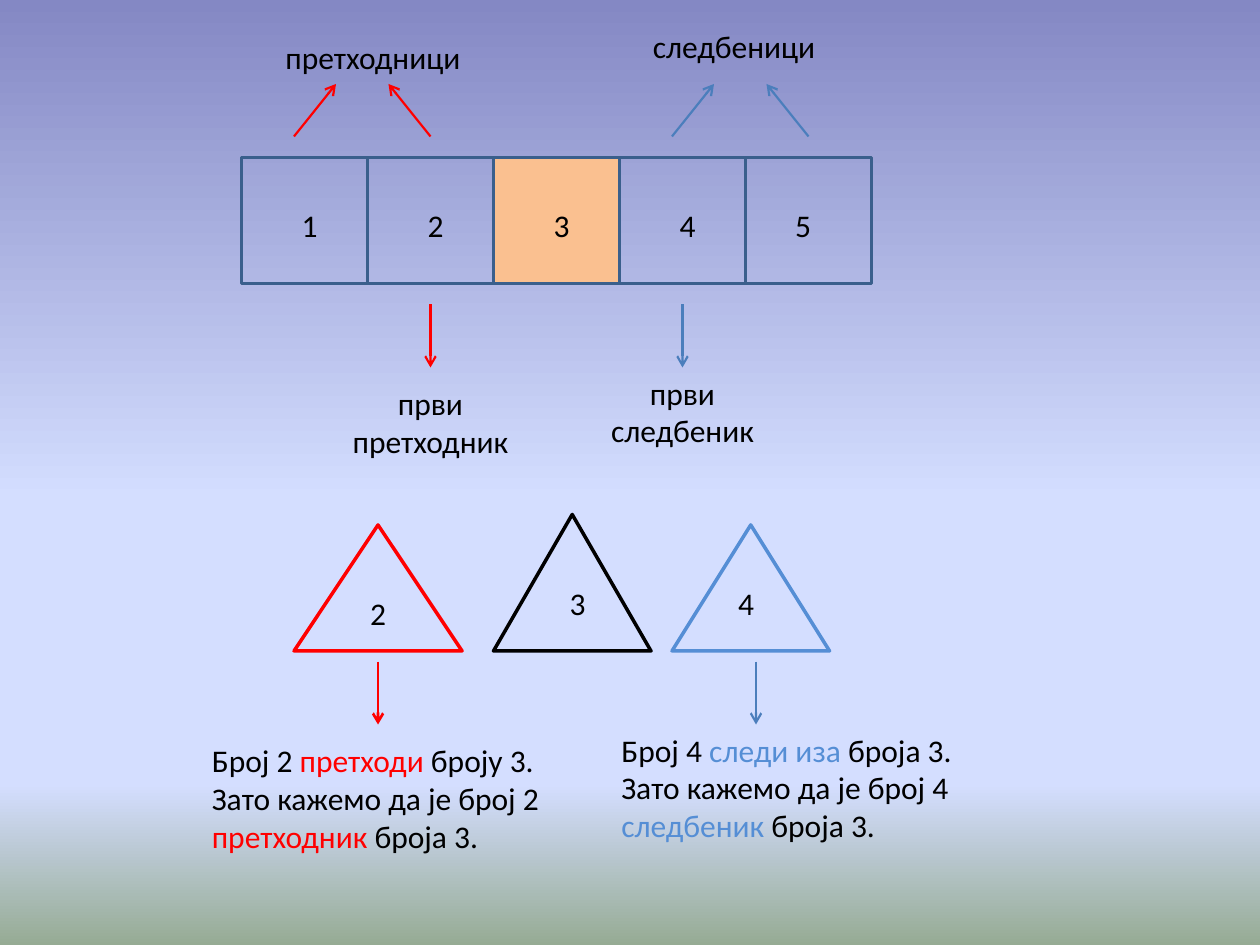
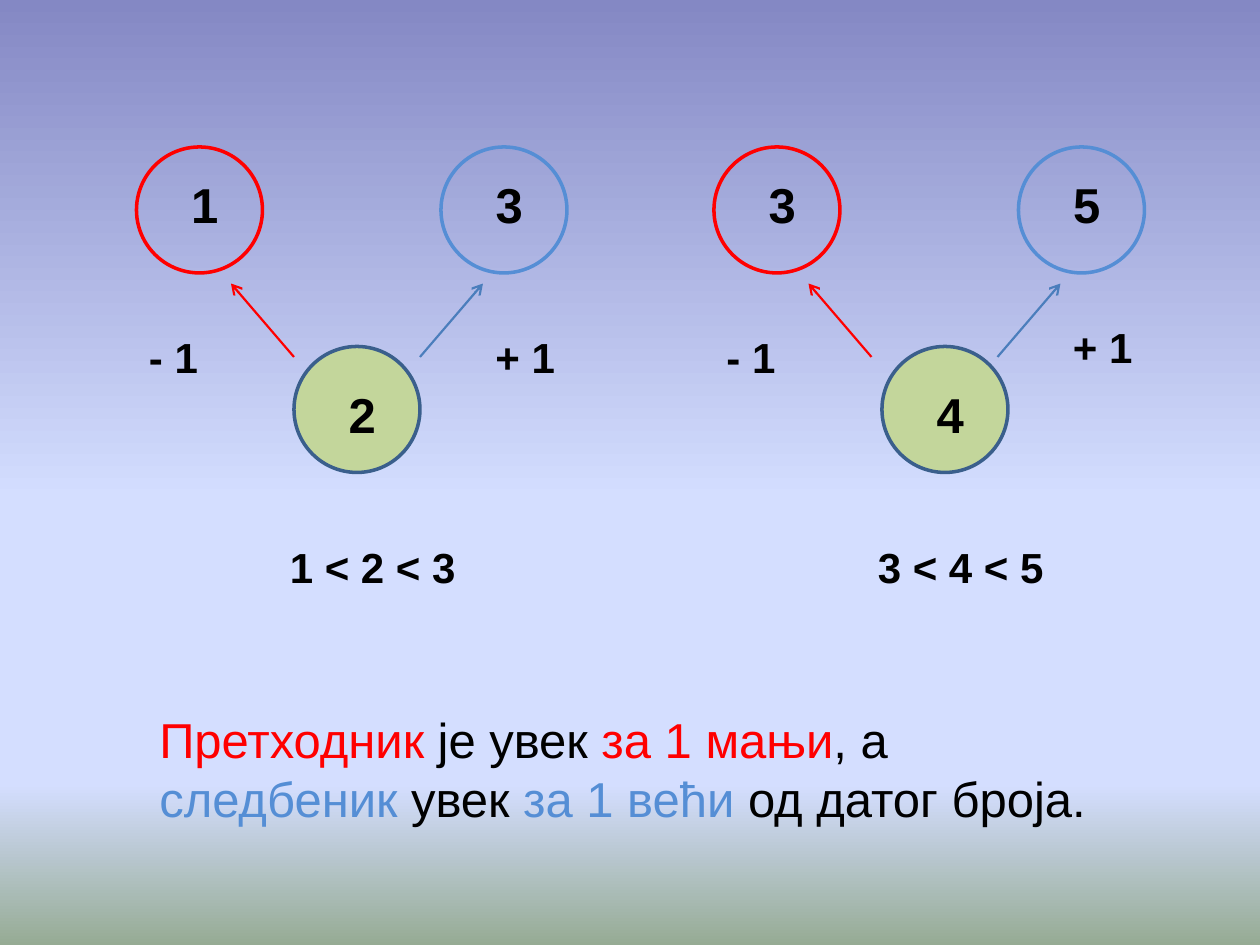
from lxml.etree import SubElement
from pptx import Presentation
from pptx.dml.color import RGBColor
from pptx.enum.shapes import MSO_CONNECTOR, MSO_SHAPE
from pptx.enum.text import MSO_AUTO_SIZE, PP_ALIGN
from pptx.oxml.ns import qn
from pptx.util import Pt

COLOURS = {
    "black": "000000",
    "red": "FF0000",
    "blue": "558ED5",
    "arrow blue": "4B7EBC",
    "outline": "3A5F8C",
    "orange": "FAC090",
    "green": "C3D69B",
}
BACKGROUND_STOPS = [(0, "8488C4"), (53, "D4DEFF"), (83, "D4DEFF"), (100, "96AB94")]
CENTER, RIGHT, LEFT = PP_ALIGN.CENTER, PP_ALIGN.RIGHT, PP_ALIGN.LEFT

# Slide 1: number strip, neighbours and triangles
STRIP_NUMBERS = ["1", "2", "3", "4", "5"]
STRIP_LEFT, STRIP_TOP, SQUARE = 138, 90, 72
CHOSEN_NUMBER = "3"

# left of the arrow pair, arrow colour
GROUP_ARROWS = [(168, "red"), (384, "arrow blue")]

# left, top, width, alignment, paragraphs
STRIP_LABELS = [
    (156, 18, 120, LEFT, ["претходници"]),
    (366, 12, 114, LEFT, ["следбеници"]),
    (186, 216, 120, CENTER, ["први", "претходник"]),
    (330, 210, 120, CENTER, ["први", "следбеник"]),
]

# x, top, colour, line width
DOWN_ARROWS = [
    (246, 174, "red", 1.25),
    (390, 174, "arrow blue", 1.25),
    (216, 378, "red", 1.5),
    (432, 378, "arrow blue", 1.25),
]
DOWN_ARROW_LENGTH = 36

# number, colour, left, top, width, number left, number top, alignment
TRIANGLES = [
    ("2", "red", 168, 300, 96, 204, 336, CENTER),
    ("3", "black", 282, 294, 90, 318, 330, CENTER),
    ("4", "blue", 384, 300, 90, 414, 330, RIGHT),
]
TRIANGLE_BOTTOM = 372

# left, top, runs
EXPLANATIONS = [
    (114, 420, [("Број 2 ", "black"), ("претходи", "red"),
                (" броју 3. Зато кажемо да је број 2 ", "black"),
                ("претходник", "red"), (" броја 3.", "black")]),
    (348, 414, [("Број 4 ", "black"), ("следи иза ", "blue"),
                ("броја 3. Зато кажемо да је број 4 ", "black"),
                ("следбеник", "blue"), (" броја 3.", "black")]),
]

# Slide 2: a number with its two neighbours
NEIGHBOUR_GROUPS = [
    {"left": 78, "middle left": 168, "numbers": ("1", "2", "3"), "plus top": 186},
    {"left": 408, "middle left": 504, "numbers": ("3", "4", "5"), "plus top": 180},
]
CIRCLE, SIDE_TOP, MIDDLE_TOP, SUCCESSOR_OFFSET = 72, 84, 198, 174
CONCLUSION = [
    ("Претходник", "red"), (" је увек ", "black"), ("за 1 мањи", "red"),
    (", а ", "black"), ("следбеник", "blue"), (" увек ", "black"),
    ("за 1 већи ", "blue"), ("од датог броја.", "black"),
]


def colour(name):
    return RGBColor.from_string(COLOURS[name])


def add_gradient_slide(presentation):
    slide = presentation.slides.add_slide(presentation.slide_layouts[6])
    fill = slide.background.fill
    fill.gradient()
    fill.gradient_angle = 270
    stop_list = slide.element.find(".//" + qn("a:gsLst"))
    for stop in list(stop_list):
        stop_list.remove(stop)
    for percent, value in BACKGROUND_STOPS:
        stop = SubElement(stop_list, qn("a:gs"), pos=str(percent * 1000))
        SubElement(stop, qn("a:srgbClr"), val=value)
    return slide


def add_outline(slide, kind, left, top, width, height, line, fill=None):
    shape = slide.shapes.add_shape(kind, Pt(left), Pt(top), Pt(width), Pt(height))
    shape.shadow.inherit = False
    if fill:
        shape.fill.solid()
        shape.fill.fore_color.rgb = colour(fill)
    else:
        shape.fill.background()
    shape.line.color.rgb = colour(line)
    shape.line.width = Pt(2)


def add_arrow(slide, start, end, line, width=1.25):
    connector = slide.shapes.add_connector(
        MSO_CONNECTOR.STRAIGHT, *(Pt(value) for value in start + end))
    connector.line.color.rgb = colour(line)
    connector.line.width = Pt(width)
    properties = connector.element.spPr
    SubElement(properties.find(qn("a:ln")), qn("a:tailEnd"), type="arrow")
    SubElement(properties, qn("a:effectLst"))


def add_text(slide, left, top, width, paragraphs, size=18, font="Calibri",
             align=LEFT, bold=False):
    """Each paragraph is a plain string or a list of (text, colour) runs."""
    height = len(paragraphs) * size * 1.2 + 7.2
    box = slide.shapes.add_textbox(Pt(left), Pt(top), Pt(width), Pt(height))
    frame = box.text_frame
    frame.word_wrap = True
    frame.auto_size = MSO_AUTO_SIZE.SHAPE_TO_FIT_TEXT
    for index, content in enumerate(paragraphs):
        paragraph = frame.add_paragraph() if index else frame.paragraphs[0]
        paragraph.alignment = align
        runs = [(content, "black")] if isinstance(content, str) else content
        for text, name in runs:
            run = paragraph.add_run()
            run.text = text
            run.font.name = font
            run.font.size = Pt(size)
            run.font.bold = bold
            run.font.color.rgb = colour(name)


def build_strip_slide(presentation):
    slide = add_gradient_slide(presentation)
    for number, line, left, top, width, text_left, text_top, align in TRIANGLES:
        add_outline(slide, MSO_SHAPE.ISOSCELES_TRIANGLE, left, top, width,
                    TRIANGLE_BOTTOM - top, line)
        add_text(slide, text_left, text_top, 24, [number], align=align)

    for index, number in enumerate(STRIP_NUMBERS):
        left = STRIP_LEFT + index * SQUARE
        fill = "orange" if number == CHOSEN_NUMBER else None
        add_outline(slide, MSO_SHAPE.RECTANGLE, left, STRIP_TOP, SQUARE, SQUARE,
                    "outline", fill)
        inset = 18 if number == STRIP_NUMBERS[-1] else 24
        add_text(slide, left + inset, STRIP_TOP + 24, 30, [number], align=CENTER)

    for left, line in GROUP_ARROWS:
        add_arrow(slide, (left, 78), (left + 24, 48), line)
        add_arrow(slide, (left + 78, 78), (left + 54, 48), line)
    for x, top, line, width in DOWN_ARROWS:
        add_arrow(slide, (x, top), (x, top + DOWN_ARROW_LENGTH), line, width)

    for left, top, width, align, paragraphs in STRIP_LABELS:
        add_text(slide, left, top, width, paragraphs, align=align)
    for left, top, runs in EXPLANATIONS:
        add_text(slide, left, top, 210, [runs])


def build_neighbours_slide(presentation):
    slide = add_gradient_slide(presentation)
    for group in NEIGHBOUR_GROUPS:
        left, middle = group["left"], group["middle left"]
        before, number, after = group["numbers"]
        # number, left, top, number drop, line, fill
        circles = [
            (before, left, SIDE_TOP, 12, "red", None),
            (number, middle, MIDDLE_TOP, 18, "outline", "green"),
            (after, left + SUCCESSOR_OFFSET, SIDE_TOP, 12, "blue", None),
        ]
        for value, circle_left, top, drop, line, fill in circles:
            add_outline(slide, MSO_SHAPE.OVAL, circle_left, top, CIRCLE, CIRCLE,
                        line, fill)
            add_text(slide, circle_left + 24, top + drop, 30, [value], 28, "Arial",
                     CENTER, True)

        add_arrow(slide, (left + 90, 204), (left + 54, 162), "red")
        add_arrow(slide, (left + 162, 204), (left + 198, 162), "arrow blue")
        add_text(slide, left, 186, 60, ["- 1"], 24, "Arial", bold=True)
        add_text(slide, left + 198, group["plus top"], 54, ["+ 1"], 24, "Arial",
                 bold=True)
        add_text(slide, middle - 42, 306, 174, [" < ".join(group["numbers"])], 24,
                 "Arial", CENTER, True)

    add_text(slide, 84, 402, 546, [CONCLUSION], 28, "Arial")


def main():
    presentation = Presentation()
    presentation.slide_width, presentation.slide_height = Pt(720), Pt(540)
    build_strip_slide(presentation)
    build_neighbours_slide(presentation)
    presentation.save("out.pptx")


if __name__ == "__main__":
    main()
